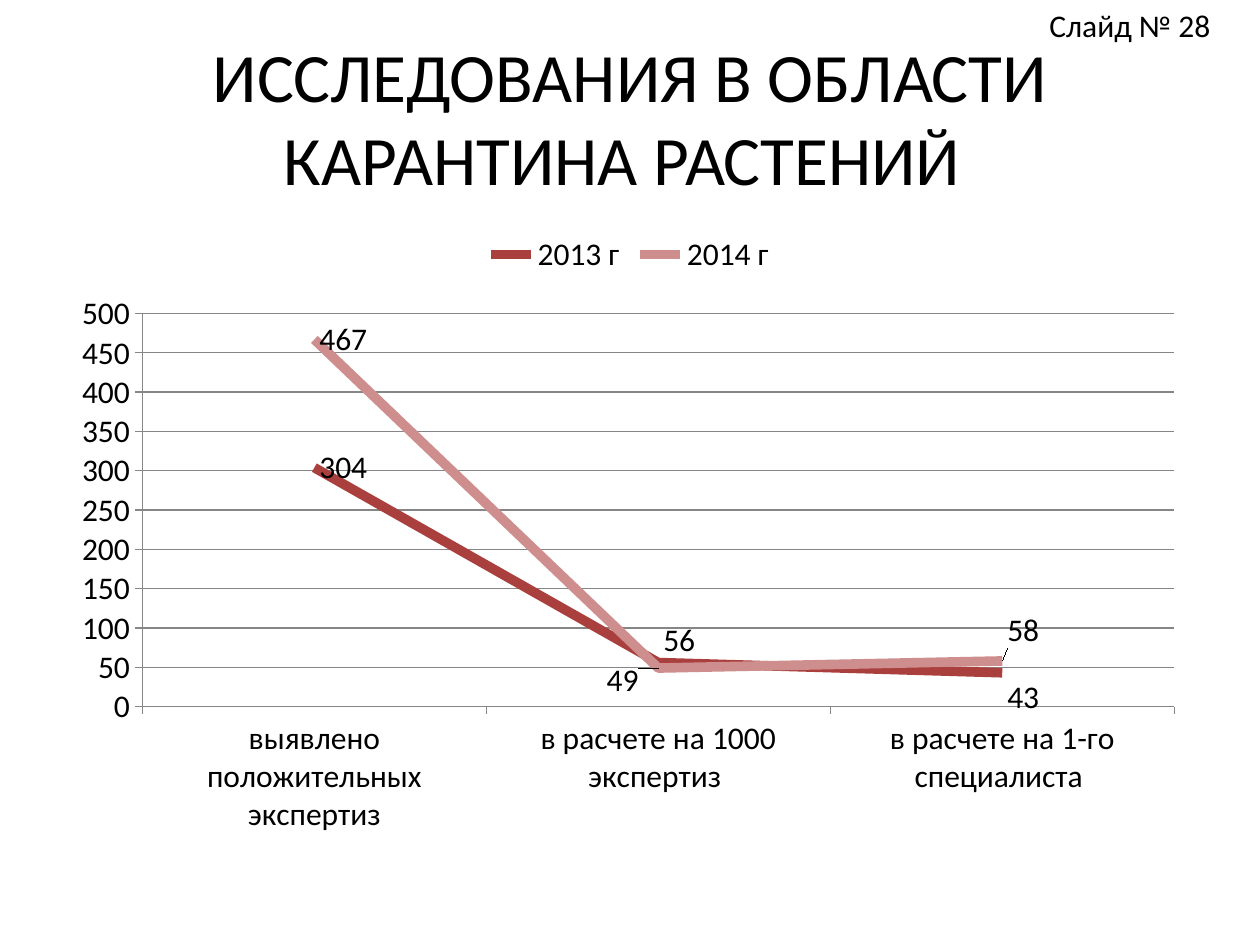
from lxml.etree import SubElement
from pptx import Presentation
from pptx.chart.data import CategoryChartData
from pptx.dml.color import RGBColor
from pptx.enum.chart import XL_CHART_TYPE as ChartType
from pptx.enum.chart import XL_LABEL_POSITION as LabelPosition
from pptx.enum.chart import XL_LEGEND_POSITION as LegendPosition
from pptx.enum.chart import XL_MARKER_STYLE as MarkerStyle
from pptx.enum.chart import XL_TICK_MARK as TickMark
from pptx.enum.text import MSO_ANCHOR as Anchor
from pptx.enum.text import MSO_AUTO_SIZE as AutoSize
from pptx.enum.text import PP_ALIGN as Align
from pptx.oxml.ns import qn
from pptx.util import Emu, Pt

PX = 914400 // 126
CATEGORIES = [
    "выявлено положительных экспертиз",
    "в расчете на 1000 экспертиз ",
    "в расчете на 1-го специалиста ",
]
SERIES = [
    ("2013 г", (304, 56, 43), "AA403D", {1: (0, -0.035), 2: (0, 0.04)}),
    ("2014 г", (467, 49, 58), "CE8E8D", {1: (-0.05, 0.02), 2: (0, -0.05)}),
]
PLOT_AREA = {"x": 0.07, "y": 0.15, "w": 0.91, "h": 0.63}


def px(*lengths):
    return [Emu(length * PX) for length in lengths]


def color(value):
    return RGBColor.from_string(value)


def apply(target, values):
    for name, value in values.items():
        setattr(target, name, value)


def style_font(font, size):
    apply(font, {"name": "Calibri", "size": Pt(size), "bold": False})
    font.color.rgb = color("000000")


def style_line(line, value, width):
    line.color.rgb = color(value)
    line.width = Pt(width)


def add_text(page, place, text, size, align, frame_format):
    box = page.shapes.add_textbox(*px(*place))
    apply(box.text_frame, frame_format)
    para = box.text_frame.paragraphs[0]
    para.alignment = align
    span = para.add_run()
    span.text = text
    style_font(span.font, size)


def set_layout(layout, values):
    for child in list(layout):
        layout.remove(child)
    manual = SubElement(layout, qn("c:manualLayout"))
    for name, value in values.items():
        SubElement(manual, qn(f"c:{name}")).set("val", str(value))


def style_axis(axis):
    apply(axis, {"major_tick_mark": TickMark.OUTSIDE, "minor_tick_mark": TickMark.NONE})
    style_line(axis.format.line, "868686", 0.75)
    style_font(axis.tick_labels.font, 18)


def style_series(series, value, offsets):
    series.smooth = False
    series.marker.style = MarkerStyle.NONE
    style_line(series.format.line, value, 5.5)
    labels = series.data_labels
    apply(labels, {"show_value": True, "position": LabelPosition.RIGHT})
    style_font(labels.font, 18)
    for index, (x, y) in offsets.items():
        label = series.points[index].data_label
        style_font(label.font, 18)
        label.position = LabelPosition.RIGHT
        element = labels._element.find(f"{qn('c:dLbl')}[{index}]")
        layout = SubElement(element, qn("c:layout"))
        element.insert(1, layout)
        set_layout(layout, {"x": x, "y": y})


def add_line_chart(page, place):
    data = CategoryChartData()
    data.categories = CATEGORIES
    for name, values, _, _ in SERIES:
        data.add_series(name, values)
    chart = page.shapes.add_chart(ChartType.LINE, *px(*place), data).chart
    style_font(chart.font, 18)
    apply(chart, {"has_title": False, "has_legend": True})
    apply(chart.legend, {"position": LegendPosition.TOP, "include_in_layout": False})
    style_font(chart.legend.font, 18)
    for axis in (chart.category_axis, chart.value_axis):
        style_axis(axis)
    value_axis = chart.value_axis
    apply(value_axis, {"minimum_scale": 0, "maximum_scale": 500, "major_unit": 50})
    style_line(value_axis.major_gridlines.format.line, "868686", 0.75)
    for series, (_, _, value, offsets) in zip(chart.plots[0].series, SERIES):
        style_series(series, value, offsets)
    plot_area = chart._chartSpace.chart.plotArea
    layout = plot_area.find(qn("c:layout"))
    if layout is None:
        layout = SubElement(plot_area, qn("c:layout"))
        plot_area.insert(0, layout)
    modes = {"layoutTarget": "inner", "xMode": "edge", "yMode": "edge"}
    set_layout(layout, {**modes, **PLOT_AREA})


def main():
    deck = Presentation()
    apply(deck, dict(zip(("slide_width", "slide_height"), px(1260, 945))))
    page = deck.slides.add_slide(deck.slide_layouts[6])
    add_text(page, (63, 38, 1134, 157), "ИССЛЕДОВАНИЯ В ОБЛАСТИ КАРАНТИНА РАСТЕНИЙ ",
             39.6, Align.CENTER, {"word_wrap": True, "vertical_anchor": Anchor.MIDDLE})
    add_line_chart(page, (63, 220, 1134, 624))
    add_text(page, (1037, 0, 223, 50), "Слайд № 28", 18, Align.LEFT,
             {"word_wrap": True, "auto_size": AutoSize.SHAPE_TO_FIT_TEXT})
    deck.save("out.pptx")


if __name__ == "__main__":
    main()
